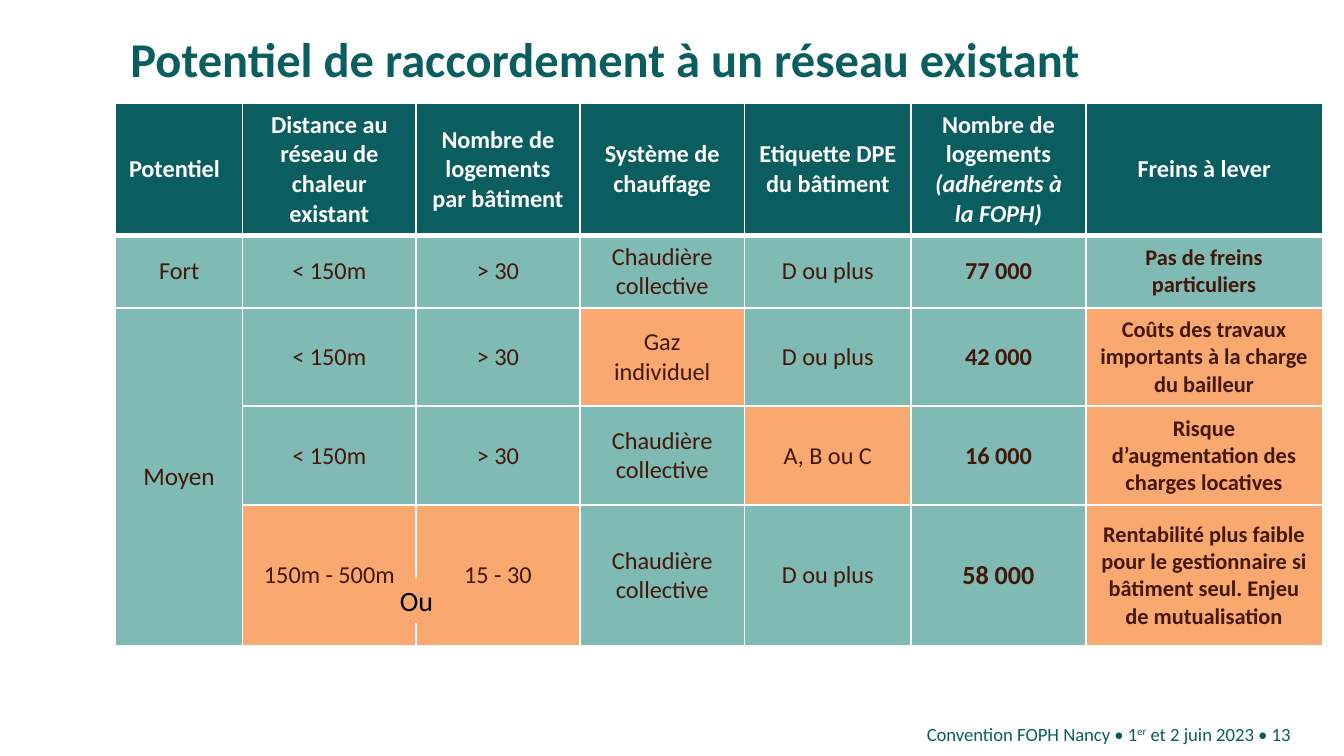
"""Build the slide on the potential for connection to an existing heat network."""
import lxml.etree
import pptx
import pptx.dml.color
import pptx.enum.shapes
import pptx.enum.text
import pptx.oxml.ns
import pptx.util

COLORS = {"teal": "0B5E60", "mint": "7FBAB4", "orange": "F9A870",
          "brown": "431809", "white": "FFFFFF", "black": "000000"}
ALIGN = pptx.enum.text.PP_ALIGN
ANCHOR = pptx.enum.text.MSO_ANCHOR
WIDTH = pptx.util.Inches(10)
HEIGHT = WIDTH * 9 // 16
ACROSS, DOWN = WIDTH / 100, HEIGHT / 100


def write(para, text, size=13, color="brown", bold=False, italic=False, raised=False, align=ALIGN.CENTER):
    para.alignment = align
    span = para.add_run()
    span.text = text
    span.font.name = "Calibri"
    span.font.size = pptx.util.Pt(size)
    span.font.bold = bold
    span.font.italic = italic
    span.font.color.rgb = pptx.dml.color.RGBColor.from_string(COLORS[color])
    if raised:
        span._r.get_or_add_rPr().set("baseline", "30000")


def place(shape, left, top, width, height, anchor=ANCHOR.MIDDLE, wrap=True):
    shape.left, shape.width = int(ACROSS * left), int(ACROSS * width)
    shape.top, shape.height = int(DOWN * top), int(DOWN * height)
    frame = shape.text_frame
    frame.margin_left = frame.margin_right = frame.margin_top = frame.margin_bottom = 0
    frame.auto_size = pptx.enum.text.MSO_AUTO_SIZE.NONE
    frame.vertical_anchor = anchor
    frame.word_wrap = wrap
    return frame.paragraphs[0]


deck = pptx.Presentation()
deck.slide_width, deck.slide_height = WIDTH, HEIGHT
page = deck.slides.add_slide(deck.slide_layouts[5])

title = place(page.shapes.title, 9.7, 5, 87.6, 15.5, anchor=ANCHOR.TOP)
title.line_spacing = 0.85
write(title, "Potentiel de raccordement à un réseau existant", size=26, color="teal", bold=True, align=ALIGN.LEFT)

footer = place(page.shapes.add_textbox(0, 0, 0, 0), 34.2, 95.7, 59.1, 2.7)
for text, raised in [("Convention FOPH Nancy • 1", False), ("er", True), (" et 2 juin 2023", False)]:
    write(footer, text, size=10, color="teal", raised=raised, align=ALIGN.RIGHT)
number = place(page.shapes.add_textbox(0, 0, 0, 0), 93.3, 95.7, 3.9, 2.7)
write(number, " • 13", size=10, color="teal", align=ALIGN.LEFT)

ROWS = [
    ["Potentiel", "Distance au réseau de chaleur existant", "Nombre de logements par bâtiment",
     "Système de chauffage", "Etiquette DPE du bâtiment", "Nombre de logements ", "Freins à lever"],
    ["Fort", "< 150m", "> 30", "Chaudière collective", "D ou plus", "77 000", "Pas de freins particuliers"],
    ["Moyen", "< 150m", "> 30", "Gaz individuel", "D ou plus", "42 000",
     "Coûts des travaux importants à la charge du bailleur"],
    ["", "< 150m", "> 30", "Chaudière collective", "A, B ou C", "16 000",
     "Risque d’augmentation des charges locatives"],
    ["", "150m - 500m", "15 - 30", "Chaudière collective", "D ou plus", "58 000",
     "Rentabilité plus faible pour le gestionnaire si bâtiment seul. Enjeu de mutualisation"],
]
COLUMN_SHARES = [9.45, 12.9, 12.2, 12.25, 12.4, 13, 17.6]
ROW_SHARES = [17.1, 9.3, 13, 13.1, 18.6]
OBSTACLES = {(2, 3), (2, 6), (3, 4), (3, 6), (4, 1), (4, 2), (4, 6)}
SIZES = {(2, 0): 13.5, (4, 5): 14}

table = page.shapes.add_table(len(ROWS), len(COLUMN_SHARES), int(ACROSS * 8.6), int(DOWN * 13.7),
                              int(ACROSS * sum(COLUMN_SHARES)), int(DOWN * sum(ROW_SHARES))).table
table.horz_banding = False
for column, share in zip(table.columns, COLUMN_SHARES):
    column.width = int(ACROSS * share)
for row, share in zip(table.rows, ROW_SHARES):
    row.height = int(DOWN * share)
table.cell(2, 0).merge(table.cell(4, 0))

for row, texts in enumerate(ROWS):
    for column, text in enumerate(texts):
        cell = table.cell(row, column)
        cell.vertical_anchor = ANCHOR.MIDDLE
        properties = cell._tc.get_or_add_tcPr()
        for side in ("lnL", "lnR", "lnT", "lnB"):
            thick = (row, side) in {(0, "lnB"), (1, "lnT")}
            line = lxml.etree.SubElement(properties, pptx.oxml.ns.qn(f"a:{side}"),
                                         w=str(pptx.util.Pt(3 if thick else 1)))
            fill = lxml.etree.SubElement(line, pptx.oxml.ns.qn("a:solidFill"))
            lxml.etree.SubElement(fill, pptx.oxml.ns.qn("a:srgbClr"), val=COLORS["white"])
        shade = "teal" if row == 0 else "orange" if (row, column) in OBSTACLES else "mint"
        cell.fill.solid()
        cell.fill.fore_color.rgb = pptx.dml.color.RGBColor.from_string(COLORS[shade])
        if text:
            size = SIZES.get((row, column), 12 if row and column == 6 else 13)
            write(cell.text_frame.paragraphs[0], text, size=size, color="brown" if row else "white",
                  bold=row == 0 or column >= 5, align=ALIGN.CENTER if row or column else ALIGN.LEFT)
write(table.cell(0, 5).text_frame.paragraphs[0], "(adhérents à la FOPH)", color="white", bold=True, italic=True)

box = page.shapes.add_shape(pptx.enum.shapes.MSO_SHAPE.RECTANGLE, 0, 0, 0, 0)
box.shadow.inherit = False
box.fill.solid()
box.fill.fore_color.rgb = pptx.dml.color.RGBColor.from_string(COLORS["orange"])
box.line.fill.background()
write(place(box, 29.8, 76.5, 2.4, 5.9, wrap=False), "Ou", size=15, color="black")

deck.save("out.pptx")
